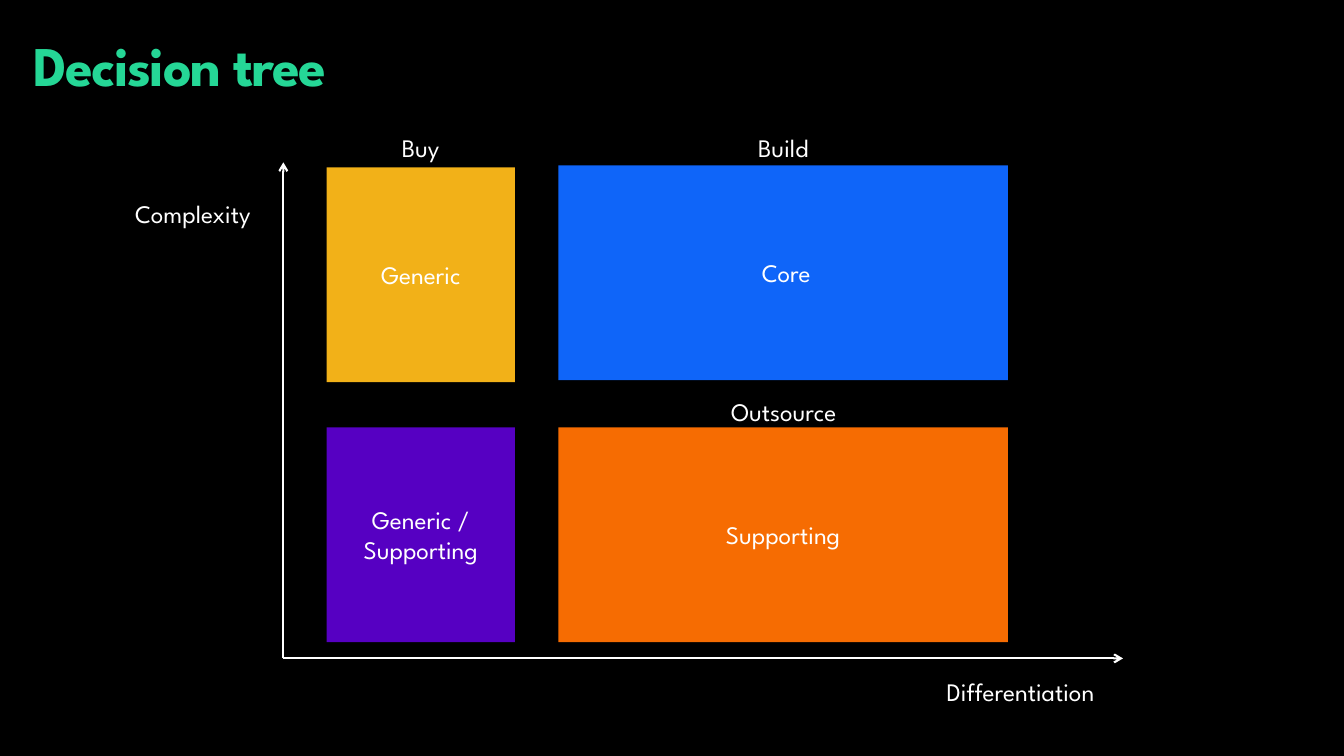
from lxml.etree import SubElement
from pptx import Presentation
from pptx.dml.color import RGBColor
from pptx.enum.shapes import MSO_CONNECTOR, MSO_SHAPE
from pptx.enum.text import MSO_ANCHOR, MSO_AUTO_SIZE, PP_ALIGN
from pptx.oxml.ns import qn
from pptx.util import Cm, Pt

BLACK = RGBColor(0x00, 0x00, 0x00)
WHITE = RGBColor(0xFF, 0xFF, 0xFF)
GREEN = RGBColor(0x25, 0xD7, 0x96)
YELLOW = RGBColor(0xF2, 0xB1, 0x18)
BLUE = RGBColor(0x0F, 0x65, 0xF9)
PURPLE = RGBColor(0x56, 0x00, 0xC2)
ORANGE = RGBColor(0xF6, 0x6C, 0x02)

ORIGIN = (7.14, 16.59)
AXIS_ENDS = [(7.14, 4.09), (28.3, 16.59)]
LEFT_COLUMN = (8.23, 4.75)
RIGHT_COLUMN = (14.07, 11.33)
LOWER_ROW = 10.77
BOX_HEIGHT = 5.41
LABEL_HEIGHT = 1.02

BOXES = [
    ("Generic", LEFT_COLUMN, 4.22, YELLOW),
    (" Core", RIGHT_COLUMN, 4.17, BLUE),
    ("Generic / Supporting", LEFT_COLUMN, LOWER_ROW, PURPLE),
    ("Supporting", RIGHT_COLUMN, LOWER_ROW, ORANGE),
]
# Wording, centre, top, width
LABELS = [
    ("Complexity", 4.86, 4.88, 3.33),
    ("Differentiation", 25.72, 16.92, 4.7),
    ("Buy", 10.6, 3.2, 1.09),
    ("Build", 19.74, 3.2, 1.52),
    ("Outsource", 19.75, 9.86, 3.12),
]


def set_all(target, values):
    for name, value in values.items():
        setattr(target, name, value)


class SlideBuilder:
    def __init__(self, page):
        self.page = page
        self.font = {"name": "League Spartan", "size": Pt(18), "bold": False}
        self.text_frame = {"margin_left": 0, "margin_right": 0,
                           "margin_top": Cm(0.13), "margin_bottom": Cm(0.13)}
        page.background.fill.solid()
        page.background.fill.fore_color.rgb = BLACK

    def add_text(self, box, wording, color=WHITE, alignment=PP_ALIGN.CENTER, **font):
        para = box.text_frame.paragraphs[0]
        para.alignment = alignment
        span = para.add_run()
        span.text = wording
        set_all(span.font, self.font | font)
        span.font.color.rgb = color
        return para

    def text_box(self, left, top, width, height, **frame):
        box = self.page.shapes.add_textbox(Cm(left), Cm(top), Cm(width), Cm(height))
        set_all(box.text_frame, self.text_frame | frame)
        return box

    def title(self, wording):
        box = self.text_box(0.84, 0.84, 32.18, 1.78, word_wrap=True)
        para = self.add_text(box, wording, GREEN, PP_ALIGN.LEFT, size=Pt(40), bold=True)
        para.line_spacing = 0.9
        para.runs[0].font._element.set("spc", "-100")

    def label(self, wording, center, top, width):
        box = self.text_box(center - width / 2, top, width, LABEL_HEIGHT,
                            word_wrap=False, auto_size=MSO_AUTO_SIZE.SHAPE_TO_FIT_TEXT)
        self.add_text(box, wording)

    def axis(self, end):
        line = self.page.shapes.add_connector(
            MSO_CONNECTOR.STRAIGHT, *(Cm(value) for value in ORIGIN + end))
        line.line.color.rgb = WHITE
        line.line.width = Pt(1.5)
        SubElement(line.line._get_or_add_ln(), qn("a:tailEnd"), type="arrow")
        SubElement(line._element.spPr, qn("a:effectLst"))

    def quadrant(self, wording, column, top, color):
        left, width = column
        box = self.page.shapes.add_shape(
            MSO_SHAPE.RECTANGLE, Cm(left), Cm(top), Cm(width), Cm(BOX_HEIGHT))
        box.shadow.inherit = False
        box.fill.solid()
        box.fill.fore_color.rgb = color
        box.line.fill.background()
        set_all(box.text_frame, {"word_wrap": True, "vertical_anchor": MSO_ANCHOR.MIDDLE})
        self.add_text(box, wording)


def main():
    deck = Presentation()
    set_all(deck, {"slide_width": Cm(33.87), "slide_height": Cm(19.05)})
    builder = SlideBuilder(deck.slides.add_slide(deck.slide_layouts[6]))
    builder.title("Decision tree")
    for end in AXIS_ENDS:
        builder.axis(end)
    for box in BOXES:
        builder.quadrant(*box)
    for label in LABELS:
        builder.label(*label)
    deck.save("out.pptx")


if __name__ == "__main__":
    main()
